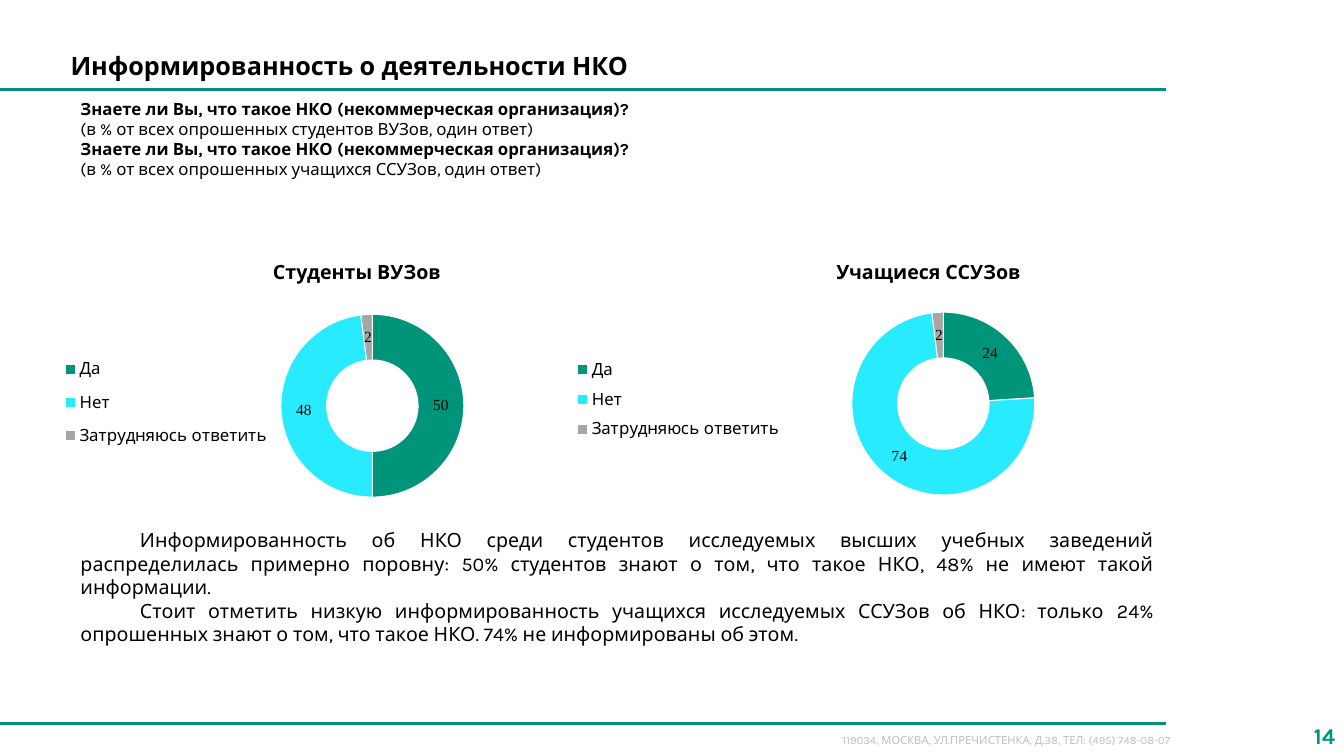
import pptx
import pptx.util
import pptx.chart.data
from dataclasses import dataclass
from lxml import etree
from pptx.dml.color import RGBColor
from pptx.enum.chart import XL_CHART_TYPE, XL_LEGEND_POSITION
from pptx.enum.shapes import MSO_CONNECTOR
from pptx.enum.text import MSO_ANCHOR, MSO_AUTO_SIZE, PP_ALIGN
from pptx.oxml.ns import qn

# Content
TITLE = "Информированность о деятельности НКО"
QUESTION = "Знаете ли Вы, что такое НКО (некоммерческая организация)?"
AUDIENCES = [
    "(в % от всех опрошенных студентов ВУЗов, один ответ)",
    "(в % от всех опрошенных учащихся ССУЗов, один ответ)",
]
ANSWERS = ["Да", "Нет", "Затрудняюсь ответить"]
# Boxes are left, top, width, height in px; plot and legend are shares of the chart
CHARTS = [
    dict(name="Студенты ВУЗов", values=[50, 48, 2],
         heading=(119, 253, 470, 34), box=(0, 305, 648, 212),
         plot=(0.43, 0.03, 0.28, 0.86), legend=(0.09, 0.18, 0.33, 0.53)),
    dict(name="Учащиеся ССУЗов", values=[24, 74, 2],
         heading=(686, 253, 470, 34), box=(508, 302, 648, 214),
         plot=(0.52, 0.01, 0.28, 0.9), legend=(0.09, 0.21, 0.33, 0.46)),
]
FINDINGS = [
    "Информированность об НКО среди студентов исследуемых высших учебных заведений "
    "распределилась примерно поровну: 50% студентов знают о том, что такое НКО, "
    "48% не имеют такой информации.",
    "Стоит отметить низкую информированность учащихся исследуемых ССУЗов об НКО: "
    "только 24% опрошенных знают о том, что такое НКО. 74% не информированы об этом.",
]
ADDRESS = "119034, МОСКВА, УЛ.ПРЕЧИСТЕНКА, Д.38, ТЕЛ: (495) 748-08-07"
PAGE = "14"
RULES_Y = [89, 718]
RULE_WIDTH = 1156
FIRST_LINE = 59


@dataclass(frozen=True)
class Theme:
    font: str = "Karla"
    label_font: str = "Times New Roman"
    ink: str = "000000"
    rule: str = "008F7D"
    page: str = "00927B"
    muted: str = "BFBFBF"
    white: str = "FFFFFF"
    slices: tuple = ("00947A", "28EBFF", "A6A6A6")
    title: int = 18
    page_size: int = 16
    body: int = 14
    small: int = 12
    label: int = 11
    chart: float = 10.5
    footer: int = 8


T = Theme()


def px(n):
    return pptx.util.Emu(n * 9144)  # 100 px to the inch


def rgb(value):
    return RGBColor.from_string(value)


def set_font(font, size, color=T.ink, bold=False, name=T.font):
    font.name, font.size, font.bold = name, pptx.util.Pt(size), bold
    font.color.rgb = rgb(color)


def write(sp, lines, size, color=T.ink, align=PP_ALIGN.LEFT,
          anchor=MSO_ANCHOR.TOP, indent=0):
    """Fill a shape with (text, bold) lines, one paragraph each."""
    tf = sp.text_frame
    tf.word_wrap = True
    tf.auto_size = MSO_AUTO_SIZE.NONE
    tf.vertical_anchor = anchor
    for i, (text, bold) in enumerate(lines):
        p = tf.paragraphs[0] if i == 0 else tf.add_paragraph()
        p.text = text
        p.alignment = align
        if indent:
            pPr = p._p.get_or_add_pPr()
            pPr.set("marL", "0")
            pPr.set("indent", str(px(indent)))
        set_font(p.font, size, color, bold)


def add_text(s, box, lines, size, **style):
    sp = s.shapes.add_textbox(*map(px, box))
    write(sp, lines, size, **style)


def make_layout(share, inner=False):
    layout = etree.Element(qn("c:layout"))
    manual = etree.SubElement(layout, qn("c:manualLayout"))
    settings = [("layoutTarget", "inner")] if inner else []
    settings += [("xMode", "edge"), ("yMode", "edge")]
    settings += zip("xywh", share)
    for tag, val in settings:
        etree.SubElement(manual, qn("c:" + tag)).set("val", str(val))
    return layout


def add_doughnut(s, spec_):
    data = pptx.chart.data.CategoryChartData(number_format="#,##0")
    data.categories = ANSWERS
    data.add_series(spec_["name"], spec_["values"])
    chart = s.shapes.add_chart(
        XL_CHART_TYPE.DOUGHNUT, *map(px, spec_["box"]), data).chart
    chart.has_title = False
    set_font(chart.font, T.chart, name=T.label_font)

    # Legend
    chart.has_legend = True
    legend = chart.legend
    legend.position = XL_LEGEND_POSITION.LEFT
    legend.include_in_layout = False
    set_font(legend.font, T.small)
    for old in legend._element.findall(qn("c:layout")):
        legend._element.remove(old)
    legend._element.find(qn("c:legendPos")).addnext(make_layout(spec_["legend"]))

    # Ring
    plot = chart.plots[0]
    plot.vary_by_categories = True
    area = chart._chartSpace.chart.plotArea
    for old in area.findall(qn("c:layout")):
        area.remove(old)
    area.insert(0, make_layout(spec_["plot"], inner=True))
    for i, color in enumerate(T.slices):
        fmt = plot.series[0].points[i].format
        fmt.fill.solid()
        fmt.fill.fore_color.rgb = rgb(color)
        fmt.line.color.rgb = rgb(T.white)
        fmt.line.width = pptx.util.Pt(0.75)

    # Values
    plot.has_data_labels = True
    labels = plot.data_labels
    labels.show_value = True
    labels.show_percentage = False
    labels.number_format = "#,##0"
    labels.number_format_is_linked = False
    set_font(labels.font, T.label, name=T.label_font)


def main():
    prs = pptx.Presentation()
    prs.slide_width, prs.slide_height = px(1333), px(750)
    s = prs.slides.add_slide(prs.slide_layouts[5])

    # Rules and footer
    for y in RULES_Y:
        rule = s.shapes.add_connector(
            MSO_CONNECTOR.STRAIGHT, px(0), px(y), px(RULE_WIDTH), px(y))
        rule.line.color.rgb = rgb(T.rule)
        rule.line.width = pptx.util.Pt(2)
        etree.SubElement(rule._element.spPr, qn("a:effectLst"))
    add_text(s, (826, 723, 384, 24), [(ADDRESS, False)], T.footer, color=T.muted)
    add_text(s, (1265, 710, 69, 40), [(PAGE, True)], T.page_size, color=T.page,
             align=PP_ALIGN.RIGHT, anchor=MSO_ANCHOR.MIDDLE)

    # Title and questions
    title = s.shapes.title
    title.left, title.top, title.width, title.height = map(px, (60, 45, 1135, 40))
    write(title, [(TITLE, True)], T.title)
    questions = [line for who in AUDIENCES
                 for line in ((QUESTION, True), (who, False))]
    add_text(s, (70, 93, 1084, 91), questions, T.small)

    # Charts
    for item in CHARTS:
        add_doughnut(s, item)
        add_text(s, item["heading"], [(item["name"], True)], T.body,
                 align=PP_ALIGN.CENTER, anchor=MSO_ANCHOR.MIDDLE)

    # Findings
    add_text(s, (70, 519, 1084, 104), [(text, False) for text in FINDINGS],
             T.body, align=PP_ALIGN.JUSTIFY, indent=FIRST_LINE)

    prs.save("out.pptx")


if __name__ == "__main__":
    main()
